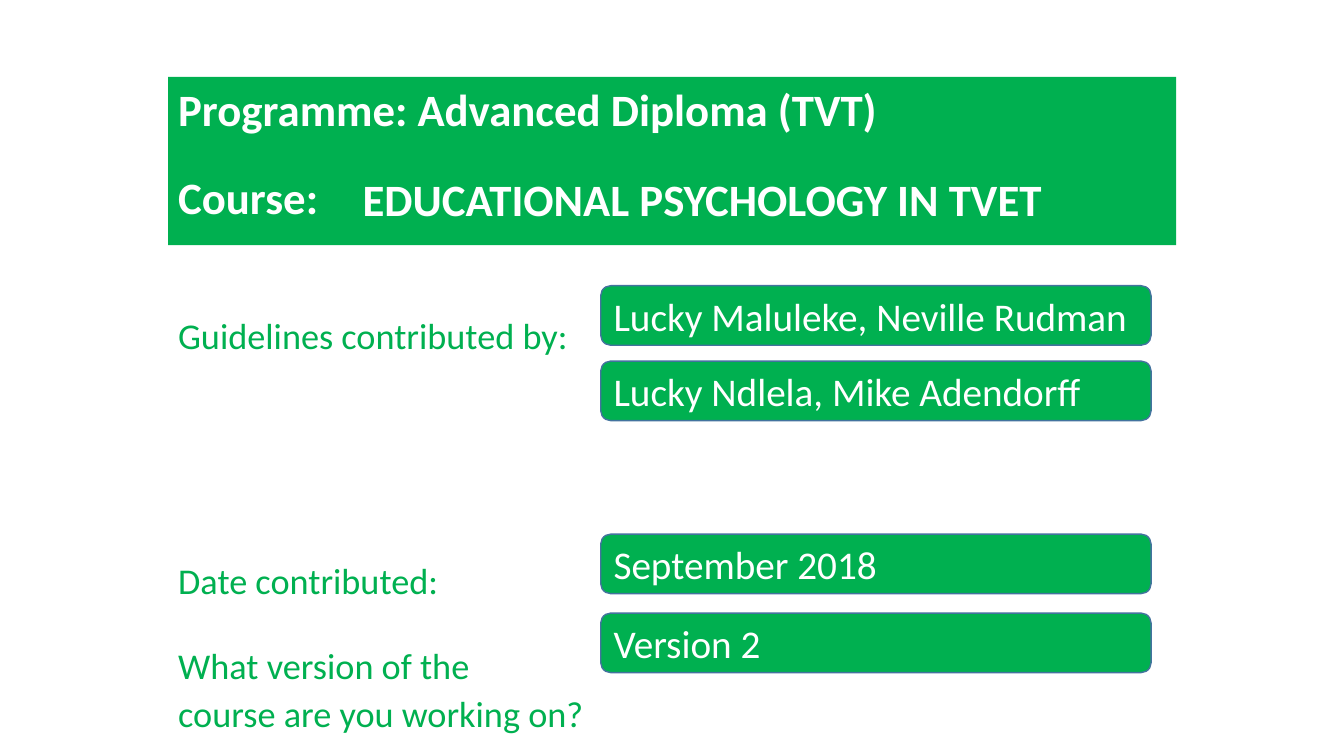
import pptx
import pptx.util
import pptx.dml.color
import pptx.enum.shapes
import pptx.enum.text
from dataclasses import dataclass

Cm, Pt = pptx.util.Cm, pptx.util.Pt
RGB = pptx.dml.color.RGBColor
SHAPE = pptx.enum.shapes.MSO_SHAPE
ANCHOR = pptx.enum.text.MSO_ANCHOR
LEFT = pptx.enum.text.PP_ALIGN.LEFT

# Each line: text, space before it in points
HEADING = [("Programme: Advanced Diploma (TVT)", 0), ("Course:", 24)]
COURSE = [("EDUCATIONAL PSYCHOLOGY IN TVET", 0)]
QUESTIONS = [
    ("Guidelines contributed by:", 0),
    ("Date contributed:", 144),
    ("What version of the", 29),
    ("course are you working on?", 3.5),
]
# Each answer: text, top in cm
ANSWERS = [
    ("Lucky Maluleke, Neville Rudman", 7.2),
    ("Lucky Ndlela, Mike Adendorff", 9.1),
    ("September 2018", 13.46),
    ("Version 2", 15.45),
]


@dataclass(frozen=True)
class Theme:
    font: str = "Calibri"
    green: RGB = RGB(0x00, 0xB0, 0x50)
    white: RGB = RGB(0xFF, 0xFF, 0xFF)
    outline: RGB = RGB(0x43, 0x73, 0x9E)
    heading_size: float = 32
    question_size: float = 25.9
    answer_size: float = 28


THEME = Theme()
MARGIN, CONTENT_WIDTH = 4.24, 25.4
ANSWER_LEFT, ANSWER_WIDTH, ANSWER_HEIGHT = 15.14, 13.87, 1.5


def write(holder, lines, size, color, bold=False, anchor=ANCHOR.TOP):
    frame = holder.text_frame
    frame.word_wrap = True
    frame.vertical_anchor = anchor
    frame.text = "\n".join(text for text, _ in lines)
    for paragraph, (_, gap) in zip(frame.paragraphs, lines):
        paragraph.alignment = LEFT
        paragraph.space_before = Pt(gap)
        font = paragraph.runs[0].font
        font.name, font.size, font.bold = THEME.font, Pt(size), bold
        font.color.rgb = color


def add_green_box(slide, kind, left, top, width, height):
    box = slide.shapes.add_shape(kind, Cm(left), Cm(top), Cm(width), Cm(height))
    box.shadow.inherit = False
    box.fill.solid()
    box.fill.fore_color.rgb = THEME.green
    return box


def main():
    deck = pptx.Presentation()
    deck.slide_width, deck.slide_height = Cm(33.87), Cm(19.05)
    slide = deck.slides.add_slide(deck.slide_layouts[6])

    banner = add_green_box(slide, SHAPE.RECTANGLE, MARGIN, 1.94, CONTENT_WIDTH, 4.24)
    banner.line.fill.background()
    write(banner, HEADING, THEME.heading_size, THEME.white, bold=True)

    questions = slide.shapes.add_textbox(Cm(MARGIN), Cm(6.56), Cm(CONTENT_WIDTH), Cm(12.26))
    write(questions, QUESTIONS, THEME.question_size, THEME.green)
    questions.text_frame.margin_top = Cm(1.34)

    course = slide.shapes.add_textbox(Cm(8.89), Cm(4.2), Cm(19.33), Cm(1.62))
    write(course, COURSE, THEME.heading_size, THEME.white, bold=True)

    for text, top in ANSWERS:
        answer = add_green_box(slide, SHAPE.ROUNDED_RECTANGLE,
                               ANSWER_LEFT, top, ANSWER_WIDTH, ANSWER_HEIGHT)
        answer.line.color.rgb = THEME.outline
        answer.line.width = Pt(1)
        write(answer, [(text, 0)], THEME.answer_size, THEME.white, anchor=ANCHOR.MIDDLE)

    deck.save("out.pptx")


if __name__ == "__main__":
    main()
